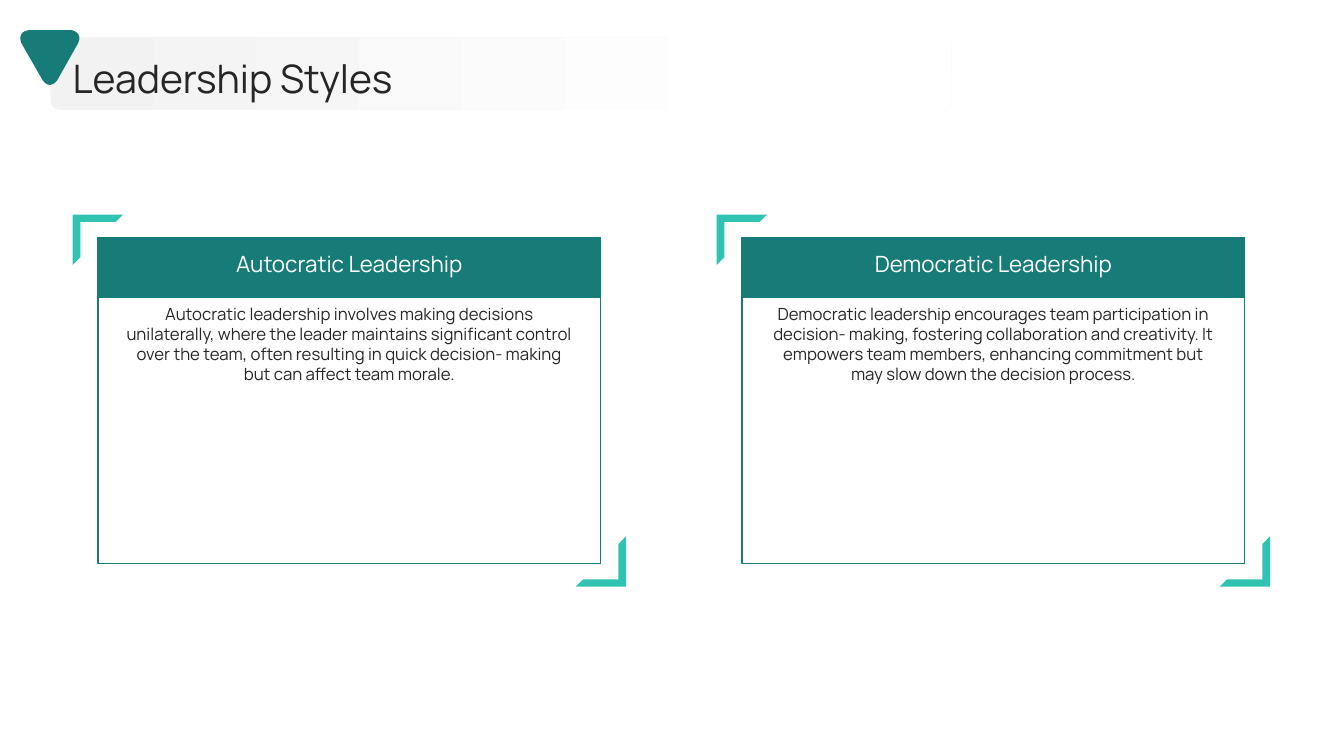
from lxml.etree import SubElement
from pptx import Presentation
from pptx.dml.color import RGBColor
from pptx.enum.shapes import MSO_SHAPE
from pptx.enum.text import MSO_ANCHOR, MSO_AUTO_SIZE, PP_ALIGN
from pptx.oxml.ns import qn
from pptx.util import Cm, Pt

TEAL, MINT, WHITE, INK = "177C77", "30C3B1", "FFFFFF", "262626"
FONT = "Manrope"
CARDS = [
    ("Autocratic Leadership",
     "Autocratic leadership involves making decisions unilaterally, where the "
     "leader maintains significant control over the team, often resulting in "
     "quick decision- making but can affect team morale."),
    ("Democratic Leadership",
     "Democratic leadership encourages team participation in decision- making, "
     "fostering collaboration and creativity. It empowers team members, "
     "enhancing commitment but may slow down the decision process."),
]


def color(code):
    return RGBColor.from_string(code)


def place(shape, x, y, w, h):
    shape.left, shape.top = Cm(x), Cm(y)
    shape.width, shape.height = Cm(w), Cm(h)


def paint(shape, fill, line=None):
    shape.shadow.inherit = False
    shape.fill.solid()
    shape.fill.fore_color.rgb = color(fill)
    if line:
        shape.line.color.rgb = color(line)
        shape.line.width = Pt(1)
    else:
        shape.line.fill.background()


def add(slide, kind, x, y, w, h, fill, line=None):
    shape = slide.shapes.add_shape(kind, Cm(x), Cm(y), Cm(w), Cm(h))
    paint(shape, fill, line)
    return shape


def write(holder, box, text, size, tint, align, anchor):
    """Fill a placeholder, without bullet or margins, and bring it to the front."""
    place(holder, *box)
    holder.element.getparent().append(holder.element)
    frame = holder.text_frame
    frame.word_wrap = True
    frame.auto_size = MSO_AUTO_SIZE.NONE
    frame.vertical_anchor = anchor
    frame.margin_left = frame.margin_right = Cm(0)
    frame.margin_top = frame.margin_bottom = Cm(0)
    para = frame.paragraphs[0]
    para.alignment = align
    para.space_before = Pt(0)
    props = para._p.get_or_add_pPr()
    props.set("marL", "0")
    props.set("indent", "0")
    SubElement(props, qn("a:buNone"))
    run = para.add_run()
    run.text = text
    run.font.name = FONT
    run.font.size = Pt(size)
    run.font.bold = False
    run.font.color.rgb = color(tint)


def corner(slide, x, y, size, turn):
    mark = add(slide, MSO_SHAPE.HALF_FRAME, x, y, size, size, MINT)
    mark.adjustments[0], mark.adjustments[1] = 0.142, 0.157
    mark.rotation = turn


def card(slide, box, head, body, title, text):
    x, y, w, h = box
    size, bar, dx, dy = 1.27, 1.52, 0.64, 0.58
    corner(slide, x, y, size, 0)
    corner(slide, x + w - size, y + h - size, size, 180)
    panel = (x + dx, y + dy, w - 2 * dx)
    add(slide, MSO_SHAPE.RECTANGLE, *panel, h - 2 * dy, WHITE, TEAL)
    add(slide, MSO_SHAPE.RECTANGLE, *panel, bar, TEAL)
    write(body, (x + size, y + 2.24, w - 2 * size, 5.87), text, 12, INK,
          PP_ALIGN.CENTER, MSO_ANCHOR.TOP)
    write(head, (x + 2.54, y + 0.46, w - 5.08, bar), title, 16, WHITE,
          PP_ALIGN.CENTER, MSO_ANCHOR.MIDDLE)


def curve(start, bend, end, steps=8):
    """Points of a cubic curve whose first control point is its start."""
    for i in range(steps + 1):
        t = i / steps
        a, b, c = (1 - t) ** 2 * (1 + 2 * t), 3 * (1 - t) * t * t, t ** 3
        yield tuple(a * p + b * q + c * r for p, q, r in zip(start, bend, end))


def wedge(slide, x, y):
    """Downward triangle with rounded corners."""
    bends = [
        ((1.28, 0), (1.58, 0.05), (1.45, 0.33)),
        ((0.92, 1.27), (0.74, 1.52), (0.56, 1.27)),
        ((0.02, 0.33), (-0.11, 0.05), (0.2, 0)),
    ]
    dots = [(Cm(x + px), Cm(y + py))
            for bend in bends for px, py in curve(*bend)]
    pen = slide.shapes.build_freeform(*dots[0])
    pen.add_line_segments(dots[1:], close=True)
    paint(pen.convert_to_shape(), TEAL)


def banner(slide, box, text):
    x, y, w, h = box
    strip = add(slide, MSO_SHAPE.ROUNDED_RECTANGLE, x, y, w, h, WHITE)
    strip.adjustments[0] = 0.139
    strip.fill.gradient()
    strip.fill.gradient_angle = 0
    for stop, (spot, code) in zip(strip.fill.gradient_stops,
                                  [(0, "F2F2F2"), (0.8, WHITE)]):
        stop.position = spot
        stop.color.rgb = color(code)
    write(slide.shapes.title, (x + 0.56, y + 0.36, 29.64, 1.3), text, 28, INK,
          PP_ALIGN.LEFT, MSO_ANCHOR.MIDDLE)
    wedge(slide, x - 0.75, y - 0.18)


def main():
    deck = Presentation()
    deck.slide_width, deck.slide_height = Cm(33.87), Cm(19.05)
    slide = deck.slides.add_slide(deck.slide_layouts.get_by_name("Comparison"))
    holders = {h.placeholder_format.idx: h for h in slide.placeholders}
    for i, (title, text) in enumerate(CARDS):
        card(slide, (1.83 + i * 16.23, 5.41, 13.95, 9.37),
             holders[2 * i + 1], holders[2 * i + 2], title, text)
    banner(slide, (1.27, 0.94, 22.71, 1.83), "Leadership Styles")
    deck.save("out.pptx")


if __name__ == "__main__":
    main()
